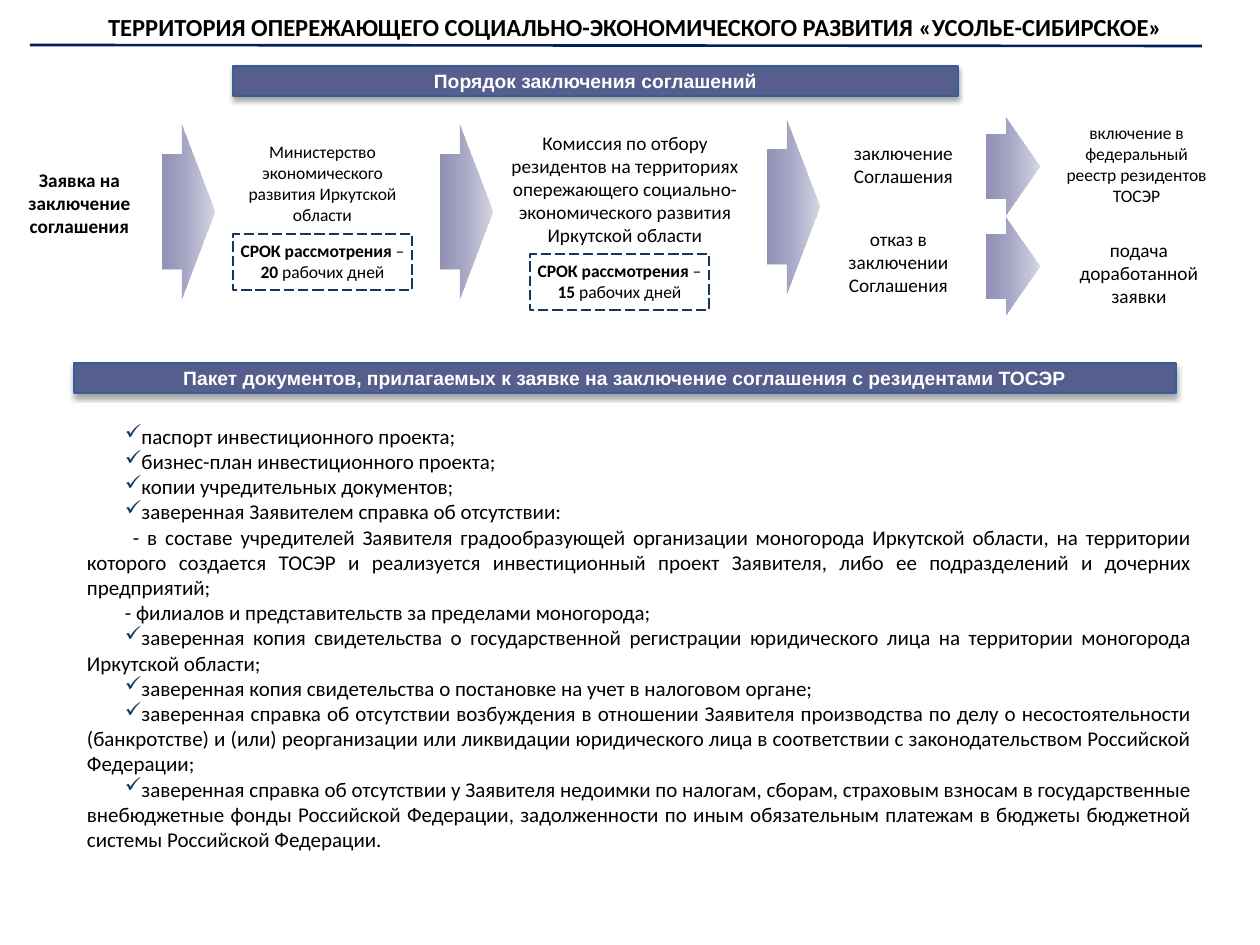
from lxml.etree import SubElement
from pptx import Presentation
from pptx.dml.color import RGBColor
from pptx.enum.dml import MSO_LINE
from pptx.enum.shapes import MSO_CONNECTOR, MSO_SHAPE
from pptx.enum.text import MSO_ANCHOR, PP_ALIGN
from pptx.oxml.ns import qn
from pptx.util import Emu, Pt

PX = 914400 / 126
SIZE = (1260, 945)
BLACK, WHITE, NAVY, DASH = "000000", "FFFFFF", "002060", "17375E"
BANNER_FILL, BANNER_LINE = "555E8D", "376092"
ARROW_STOPS = [("24246E", 50), ("C7C7DC", 71)]
ARROW_ADJUST = (0.657, 0.634)
ARROW_WIDTH = 52
WIDE, NARROW = 13, 5  # side insets of text boxes
TOP, MIDDLE = MSO_ANCHOR.TOP, MSO_ANCHOR.MIDDLE

TITLE = "ТЕРРИТОРИЯ ОПЕРЕЖАЮЩЕГО СОЦИАЛЬНО-ЭКОНОМИЧЕСКОГО РАЗВИТИЯ «УСОЛЬЕ-СИБИРСКОЕ»"
TITLE_RULE = (30, 45, 1202, 46)

BANNERS = [
    ("Порядок заключения соглашений", (233, 66, 725, 30)),
    ("Пакет документов, прилагаемых к заявке на заключение соглашения с резидентами ТОСЭР",
     (74, 363, 1102, 30)),
]

# text, box, size, bold, side inset, anchor
LABELS = [
    (TITLE, (35, 6, 1201, 43), 14, True, WIDE, TOP),
    ("Заявка на заключение соглашения", (-15, 162, 189, 83), 11, True, NARROW, TOP),
    ("Министерство экономического развития Иркутской области",
     (233, 135, 179, 97), 10, False, NARROW, TOP),
    ("Комиссия по отбору резидентов на территориях опережающего "
     "социально-экономического развития Иркутской области",
     (491, 125, 268, 130), 11, False, WIDE, TOP),
    ("заключение Соглашения", (809, 135, 189, 59), 11, False, WIDE, MIDDLE),
    ("отказ в заключении Соглашения", (809, 220, 179, 83), 11, False, WIDE, MIDDLE),
    ("включение в федеральный реестр резидентов ТОСЭР",
     (1057, 116, 159, 97), 10, False, NARROW, TOP),
    ("подача доработанной заявки", (1057, 231, 164, 83), 11, False, WIDE, MIDDLE),
]

# left, top, height
ARROWS = [(163, 125, 174), (441, 125, 174), (768, 120, 174), (987, 118, 96), (987, 218, 96)]

# days, left, top
DEADLINES = [("20", 233, 234), ("15", 530, 254)]
DEADLINE_SIZE = (179, 56)

DOCUMENTS_BOX = (74, 415, 1131, 445)
DOCUMENTS_INDENT = 38
# ticked, text
DOCUMENTS = [
    (True, "паспорт инвестиционного проекта;"),
    (True, "бизнес-план инвестиционного проекта;"),
    (True, "копии учредительных документов;"),
    (True, "заверенная Заявителем справка об отсутствии:"),
    (False, " - в составе учредителей Заявителя градообразующей организации моногорода "
            "Иркутской области, на территории которого создается ТОСЭР и реализуется "
            "инвестиционный проект Заявителя, либо ее подразделений и дочерних предприятий;"),
    (False, "- филиалов и представительств за пределами моногорода;"),
    (True, "заверенная копия свидетельства о государственной регистрации юридического лица "
           "на территории моногорода Иркутской области;"),
    (True, "заверенная копия свидетельства о постановке на учет в налоговом органе;"),
    (True, "заверенная справка об отсутствии возбуждения в отношении Заявителя производства "
           "по делу о несостоятельности (банкротстве) и (или) реорганизации или ликвидации "
           "юридического лица в соответствии с законодательством Российской Федерации;"),
    (True, "заверенная справка об отсутствии у Заявителя недоимки по налогам, сборам, "
           "страховым взносам в государственные внебюджетные фонды Российской Федерации, "
           "задолженности по иным обязательным платежам в бюджеты бюджетной системы "
           "Российской Федерации."),
]


def px(length):
    return Emu(round(length * PX))


def box_emu(box):
    return [px(length) for length in box]


def color(value):
    return RGBColor.from_string(value)


def set_line(line, value, width):
    line.color.rgb = color(value)
    line.width = Pt(width)


def set_frame(frame, side=WIDE, anchor=TOP, wrap=True):
    values = {"margin_left": px(side), "margin_right": px(side), "margin_top": px(6),
              "margin_bottom": px(6), "vertical_anchor": anchor, "word_wrap": wrap}
    for name, value in values.items():
        setattr(frame, name, value)


def write(paragraph, runs, size, font="Calibri", fill=BLACK, align=PP_ALIGN.CENTER):
    """Fill a paragraph with (text, bold) runs."""
    paragraph.alignment = align
    for text, bold in runs:
        run = paragraph.add_run()
        run.text = text
        for name, value in {"name": font, "size": Pt(size), "bold": bold}.items():
            setattr(run.font, name, value)
        run.font.color.rgb = color(fill)


def add_plain_shape(shapes, preset, box):
    shape = shapes.add_shape(preset, *box_emu(box))
    shape.shadow.inherit = False
    return shape


def add_banner(shapes, text, box):
    banner = add_plain_shape(shapes, MSO_SHAPE.RECTANGLE, box)
    banner.fill.solid()
    banner.fill.fore_color.rgb = color(BANNER_FILL)
    set_line(banner.line, BANNER_LINE, 0.75)
    effects = banner._element.spPr.find(qn("a:effectLst"))
    shadow = SubElement(effects, qn("a:outerShdw"), blurRad=str(Pt(3.1)), dist=str(Pt(1.8)),
                        dir="5400000", rotWithShape="0")
    shade = SubElement(shadow, qn("a:srgbClr"), val=BLACK)
    SubElement(shade, qn("a:alpha"), val="35000")
    set_frame(banner.text_frame, anchor=MIDDLE, wrap=False)
    write(banner.text_frame.paragraphs[0], [(text, True)], 11, "Arial", WHITE)


def add_arrow(shapes, left, top, height):
    arrow = add_plain_shape(shapes, MSO_SHAPE.RIGHT_ARROW, (left, top, ARROW_WIDTH, height))
    for index, value in enumerate(ARROW_ADJUST):
        arrow.adjustments[index] = value
    arrow.line.fill.background()
    arrow.fill.gradient()
    arrow.fill.gradient_angle = 0
    for stop, (value, _) in zip(arrow.fill.gradient_stops, ARROW_STOPS):
        stop.color.rgb = color(value)
    stop_colors = arrow._element.spPr.find(qn("a:gradFill")).iter(qn("a:srgbClr"))
    for stop_color, (_, opacity) in zip(stop_colors, ARROW_STOPS):
        SubElement(stop_color, qn("a:alpha"), val=str(opacity * 1000))


def add_deadline(shapes, days, left, top):
    deadline = add_plain_shape(shapes, MSO_SHAPE.RECTANGLE, (left, top, *DEADLINE_SIZE))
    deadline.fill.background()
    set_line(deadline.line, DASH, 0.75)
    deadline.line.dash_style = MSO_LINE.LONG_DASH
    set_frame(deadline.text_frame, NARROW)
    runs = [("СРОК рассмотрения ", True), ("– ", False), (days, True), (" рабочих дней", False)]
    write(deadline.text_frame.paragraphs[0], runs, 10)


def add_documents(shapes):
    frame = shapes.add_textbox(*box_emu(DOCUMENTS_BOX)).text_frame
    set_frame(frame, anchor=MIDDLE)
    for index, (ticked, text) in enumerate(DOCUMENTS):
        paragraph = frame.add_paragraph() if index else frame.paragraphs[0]
        properties = paragraph._p.get_or_add_pPr()
        properties.set("marL", "0")
        properties.set("indent", str(px(DOCUMENTS_INDENT)))
        if ticked:
            SubElement(SubElement(properties, qn("a:buClr")), qn("a:srgbClr"), val=DASH)
            SubElement(properties, qn("a:buChar"), char="✓")
        write(paragraph, [(text, False)], 12, align=PP_ALIGN.JUSTIFY)


def main():
    deck = Presentation()
    deck.slide_width, deck.slide_height = box_emu(SIZE)
    shapes = deck.slides.add_slide(deck.slide_layouts[6]).shapes

    rule = shapes.add_connector(MSO_CONNECTOR.STRAIGHT, *box_emu(TITLE_RULE))
    set_line(rule.line, NAVY, 1.5)
    SubElement(rule._element.spPr, qn("a:effectLst"))

    for banner in BANNERS:
        add_banner(shapes, *banner)
    for text, box, size, bold, side, anchor in LABELS:
        frame = shapes.add_textbox(*box_emu(box)).text_frame
        set_frame(frame, side, anchor)
        write(frame.paragraphs[0], [(text, bold)], size)
    for arrow in ARROWS:
        add_arrow(shapes, *arrow)
    for deadline in DEADLINES:
        add_deadline(shapes, *deadline)
    add_documents(shapes)
    deck.save("out.pptx")


if __name__ == "__main__":
    main()
